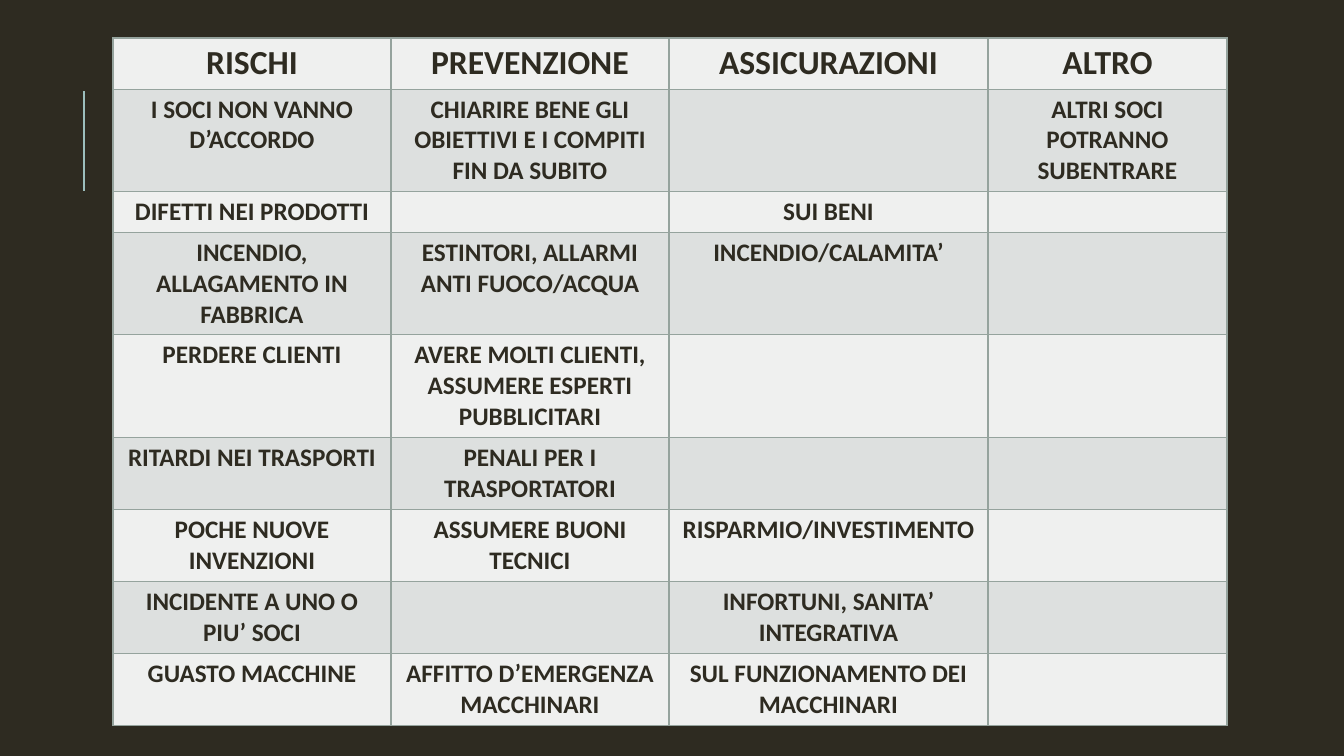
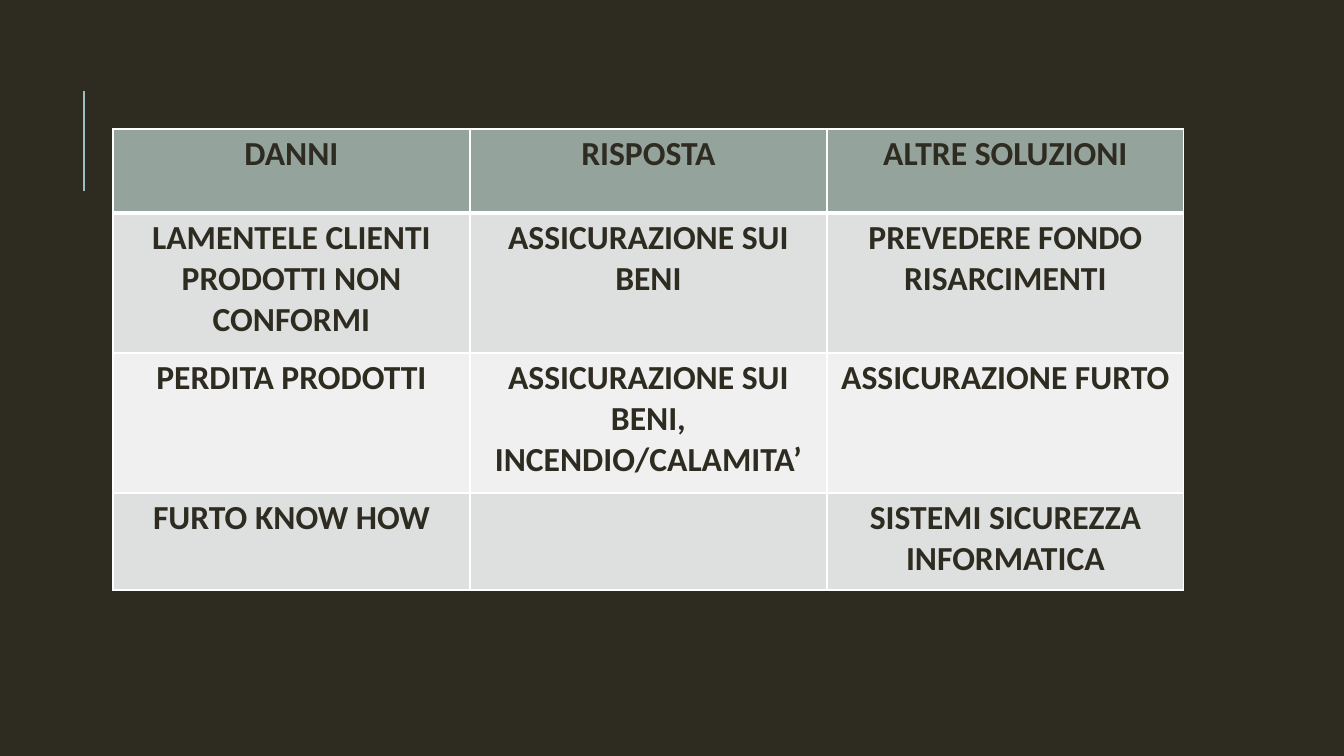
"""Build two dark slides with tables of business risks and damages."""
from dataclasses import dataclass

from lxml import etree
from pptx import Presentation
from pptx import util as u
from pptx.dml import color
from pptx.enum import shapes, text
from pptx.oxml import ns


@dataclass(frozen=True)
class Theme:
    background: str = "2E2B21"
    ink: str = "2E2B21"
    accent: str = "9CBEBD"
    sage: str = "95A39D"
    pale: str = "EFF0EF"
    band: str = "DDE0DF"
    white: str = "FFFFFF"
    font: str = "Calibri"
    large: int = 24
    small: int = 18
    accent_width: float = 1.5
    border_width: int = 1
    header_rule: int = 3


THEME = Theme()
EMU_PER_PX = 12192000 / 1344


def px(length):
    return u.Emu(round(length * EMU_PER_PX))


def add_border(cell, side, width, rgb):
    properties = cell._tc.get_or_add_tcPr()
    line = etree.SubElement(properties, ns.qn(f"a:ln{side}"), w=str(u.Pt(width)))
    fill = etree.SubElement(line, ns.qn("a:solidFill"))
    etree.SubElement(fill, ns.qn("a:srgbClr"), val=rgb)


TABLES = [
    {
        "top": 38,
        "columns": [278, 278, 319, 239],
        "heights": [51, 102, 41, 102, 102, 72, 72, 72, 72],
        "fills": [THEME.pale, THEME.band],
        "header_fill": THEME.pale,
        "border": THEME.sage,
        "header_rule": THEME.border_width,
        "body_size": THEME.small,
        "rows": [
            ["RISCHI", "PREVENZIONE", "ASSICURAZIONI", "ALTRO"],
            ["I SOCI NON VANNO D’ACCORDO",
             "CHIARIRE BENE GLI OBIETTIVI E I COMPITI FIN DA SUBITO",
             "", "ALTRI SOCI POTRANNO SUBENTRARE"],
            ["DIFETTI NEI PRODOTTI", "", "SUI BENI", ""],
            ["INCENDIO, ALLAGAMENTO IN FABBRICA",
             "ESTINTORI, ALLARMI ANTI FUOCO/ACQUA", "INCENDIO/CALAMITA’", ""],
            ["PERDERE CLIENTI",
             "AVERE MOLTI CLIENTI,\nASSUMERE ESPERTI PUBBLICITARI", "", ""],
            ["RITARDI NEI TRASPORTI", "PENALI PER I TRASPORTATORI", "", ""],
            ["POCHE NUOVE INVENZIONI", "ASSUMERE BUONI TECNICI",
             "RISPARMIO/INVESTIMENTO", ""],
            ["INCIDENTE A UNO O PIU’ SOCI", "",
             "INFORTUNI, SANITA’ INTEGRATIVA", ""],
            ["GUASTO MACCHINE", "AFFITTO D’EMERGENZA MACCHINARI",
             "SUL FUNZIONAMENTO DEI MACCHINARI", ""],
        ],
    },
    {
        "top": 129,
        "columns": [357, 357, 357],
        "heights": [84, 140, 140, 97],
        "fills": [THEME.pale, THEME.band],
        "header_fill": THEME.sage,
        "border": THEME.white,
        "header_rule": THEME.header_rule,
        "body_size": THEME.large,
        "rows": [
            ["DANNI", "RISPOSTA", "ALTRE SOLUZIONI"],
            ["LAMENTELE CLIENTI PRODOTTI NON CONFORMI",
             "ASSICURAZIONE SUI BENI", "PREVEDERE FONDO RISARCIMENTI"],
            ["PERDITA PRODOTTI", "ASSICURAZIONE SUI BENI, INCENDIO/CALAMITA’",
             "ASSICURAZIONE FURTO"],
            ["FURTO KNOW HOW", "", "SISTEMI SICUREZZA INFORMATICA"],
        ],
    },
]
TABLE_LEFT = 113

presentation = Presentation()
presentation.slide_width, presentation.slide_height = px(1344), px(756)
master_fill = presentation.slide_master.background.fill
master_fill.solid()
master_fill.fore_color.rgb = color.RGBColor.from_string(THEME.background)

for content in TABLES:
    slide = presentation.slides.add_slide(presentation.slide_layouts[6])

    accent_line = slide.shapes.add_connector(
        shapes.MSO_CONNECTOR.STRAIGHT, px(84), px(191), px(84), px(91))
    accent_line.line.color.rgb = color.RGBColor.from_string(THEME.accent)
    accent_line.line.width = u.Pt(THEME.accent_width)
    etree.SubElement(accent_line._element.spPr, ns.qn("a:effectLst"))

    columns, heights, rows = content["columns"], content["heights"], content["rows"]
    table = slide.shapes.add_table(
        len(rows), len(columns), px(TABLE_LEFT), px(content["top"]),
        px(sum(columns)), px(sum(heights))).table
    for column, width in zip(table.columns, columns):
        column.width = px(width)

    for row_index, (row, height, labels) in enumerate(zip(table.rows, heights, rows)):
        row.height = px(height)
        is_header = row_index == 0
        fill = content["header_fill"] if is_header else content["fills"][row_index % 2]
        size = THEME.large if is_header else content["body_size"]
        widths = dict.fromkeys("LRTB", THEME.border_width)
        if is_header:
            widths["B"] = content["header_rule"]
        elif row_index == 1:
            widths["T"] = content["header_rule"]

        for cell, label in zip(row.cells, labels):
            for side, width in widths.items():
                add_border(cell, side, width, content["border"])
            cell.fill.solid()
            cell.fill.fore_color.rgb = color.RGBColor.from_string(fill)
            if not label:
                continue
            for line_index, line in enumerate(label.split("\n")):
                frame = cell.text_frame
                paragraph = frame.add_paragraph() if line_index else frame.paragraphs[0]
                paragraph.alignment = text.PP_ALIGN.CENTER
                run = paragraph.add_run()
                run.text = line
                run.font.name = THEME.font
                run.font.size = u.Pt(size)
                run.font.bold = True
                run.font.color.rgb = color.RGBColor.from_string(THEME.ink)

presentation.save("out.pptx")
